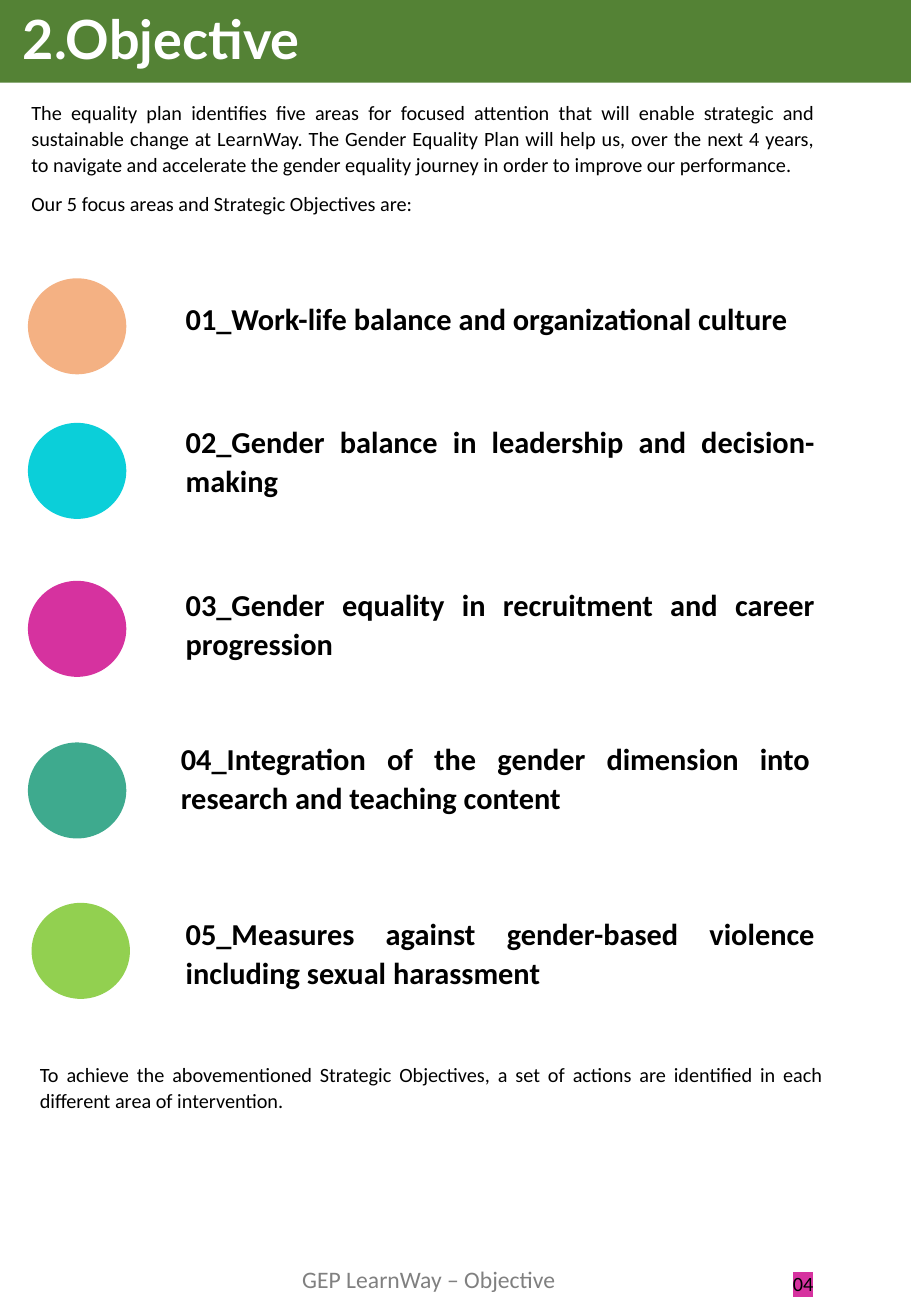
from dataclasses import dataclass

from lxml.etree import SubElement
from pptx import Presentation
from pptx.dml.color import RGBColor
from pptx.enum.shapes import MSO_SHAPE
from pptx.enum.text import PP_ALIGN
from pptx.oxml.ns import qn
from pptx.util import Inches, Pt


@dataclass(frozen=True)
class Theme:
    band: str = "548235"
    white: str = "FFFFFF"
    ink: str = "000000"
    grey: str = "808080"
    mark: str = "D6329F"
    dots: tuple = ("F4B183", "0BCFD9", "D6329F", "3EAA8E", "92D050")
    head: str = "Lato"
    body: str = "Calibri"
    title: int = 32
    area: int = 18
    foot: int = 14
    text: int = 12


THEME = Theme()
JUSTIFY = {"alignment": PP_ALIGN.JUSTIFY, "line_spacing": 1.07, "space_after": Pt(8)}
INTRO = (
    "The equality plan identifies five areas for focused attention that will enable "
    "strategic and sustainable change at LearnWay. The Gender Equality Plan will help us, "
    "over the next 4 years, to navigate and accelerate the gender equality journey in order "
    "to improve our performance.",
    "Our 5 focus areas and Strategic Objectives are:",
)
CLOSE = ("To achieve the abovementioned Strategic Objectives, a set of actions are "
         "identified in each different area of intervention.")
# Circle left and top, label left and top, label
AREAS = (
    (0.23, 2.29, 1.43, 2.4, "01_Work-life balance and organizational culture"),
    (0.23, 3.48, 1.43, 3.41, "02_Gender balance in leadership and decision-making"),
    (0.23, 4.78, 1.43, 4.75, "03_Gender equality in recruitment and career progression"),
    (0.23, 6.11, 1.39, 6.02,
     "04_Integration of the gender dimension into research and teaching content"),
    (0.26, 7.43, 1.43, 7.46,
     "05_Measures against gender-based violence including sexual harassment"),
)


def apply(item, values):
    for name, value in values.items():
        setattr(item, name, value)


def add_form(slide, kind, box, color):
    form = slide.shapes.add_shape(kind, *map(Inches, box))
    form.shadow.inherit = False
    form.fill.solid()
    form.fill.fore_color.rgb = RGBColor.from_string(color)
    form.line.fill.background()


def add_text(slide, box, lines, size, color=THEME.ink, face=THEME.body,
             bold=False, layout=JUSTIFY):
    """Add one paragraph per line and return the last run."""
    frame = slide.shapes.add_textbox(*map(Inches, box)).text_frame
    frame.word_wrap = True
    for index, line in enumerate(lines):
        para = frame.add_paragraph() if index else frame.paragraphs[0]
        apply(para, layout)
        run = para.add_run()
        run.text = line
        apply(run.font, {"size": Pt(size), "name": face, "bold": bold})
        run.font.color.rgb = RGBColor.from_string(color)
    return run


def highlight(run, color):
    props = run.font._element
    mark = SubElement(props, qn("a:highlight"))
    SubElement(mark, qn("a:srgbClr")).set("val", color)
    props.find(qn("a:latin")).addprevious(mark)


def add_head(slide, box):
    left, top, width, height = box
    add_form(slide, MSO_SHAPE.RECTANGLE, box, THEME.band)
    add_text(slide, (left + 0.09, top + 0.01, width - 0.71, height), ["2.Objective"],
             THEME.title, THEME.white, THEME.head, True, {})


def add_areas(slide, box):
    left, top, width, _ = box
    for (dot_x, dot_y, text_x, text_y, label), color in zip(AREAS, THEME.dots):
        add_form(slide, MSO_SHAPE.OVAL, (left + dot_x, top + dot_y, 0.81, 0.79), color)
        add_text(slide, (left + text_x, top + text_y, width - 2.12, 0.73), [label],
                 THEME.area, bold=True)


def add_foot(slide, box):
    left, top, width, height = box
    add_text(slide, (left + 2.39, top, 3.9, height), ["GEP LearnWay – Objective"],
             THEME.foot, THEME.grey, layout={})
    page = add_text(slide, (left + width - 1.07, top + 0.04, 0.6, height), ["04"],
                    THEME.text)
    highlight(page, THEME.mark)


def main():
    deck = Presentation()
    apply(deck, {"slide_width": Inches(7.5), "slide_height": Inches(10.83)})
    slide = deck.slides.add_slide(deck.slide_layouts[6])
    add_head(slide, (0, -0.01, 7.5, 0.69))
    add_text(slide, (0.16, 0.76, 6.65, 1.4), INTRO, THEME.text)
    add_areas(slide, (0, 0, 7.5, 8.3))
    add_text(slide, (0.23, 8.68, 6.65, 0.6), [CLOSE], THEME.text)
    add_foot(slide, (0, 10.36, 7.5, 0.34))
    deck.save("out.pptx")


if __name__ == "__main__":
    main()
